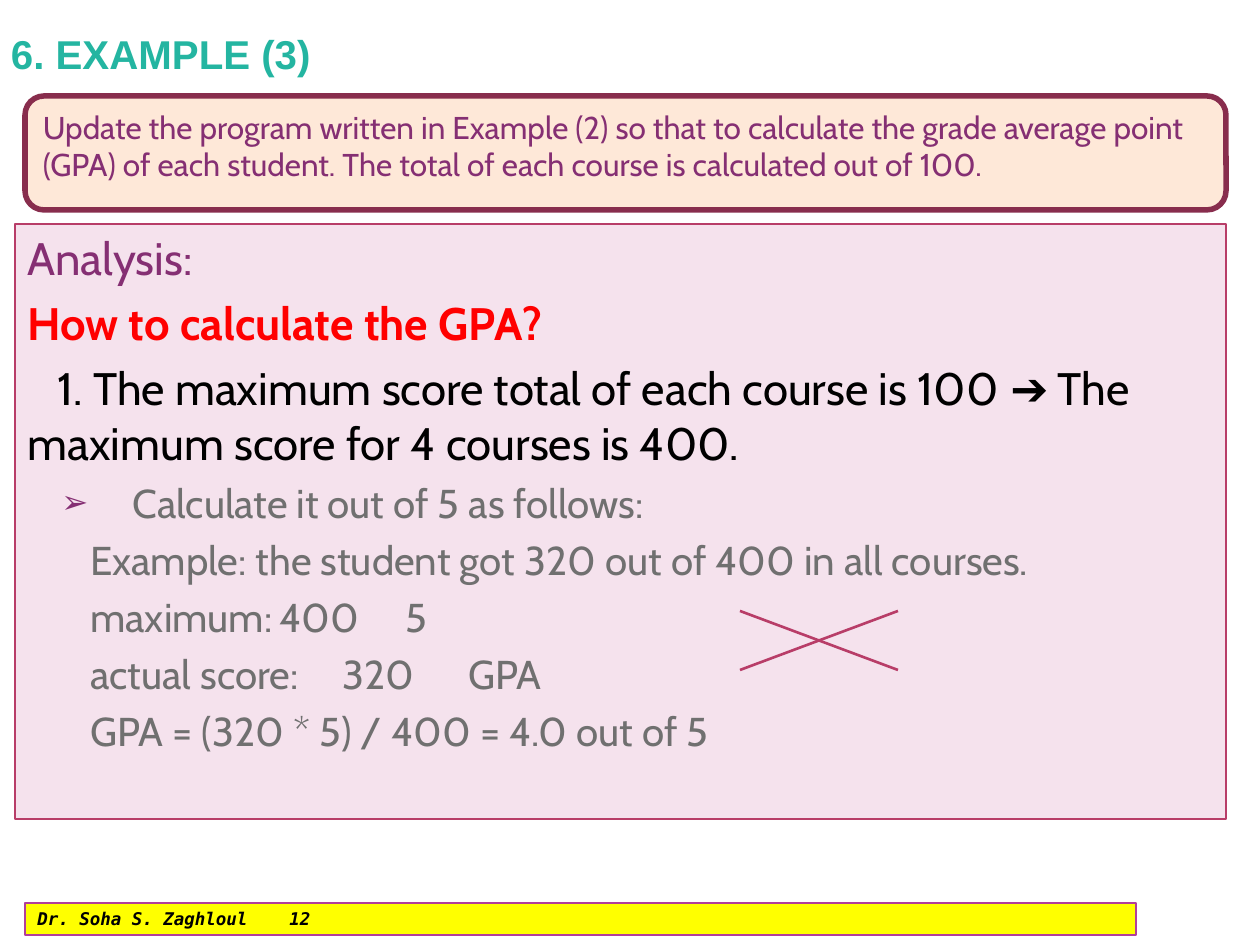
"""Build the GPA analysis slide with its worked cross-multiplication example."""
from lxml import etree
from pptx import Presentation
from pptx import util as u
from pptx.dml.color import RGBColor
from pptx.enum import shapes, text
from pptx.oxml.ns import qn

SCALE = 914400 / 126
COLORS = {
    "title": "24B5A1", "plum": "852F73", "red": "FF0000", "black": "000000",
    "gray": "707070", "panel": "F5E2ED", "rose": "B83D68", "peach": "FEE8D8",
    "wine": "882D4D", "yellow": "FFFF00", "violet": "B13F9A",
}
TITLE = "6. EXAMPLE (3)"
TASK = ("Update the program written in Example (2) so that to calculate the grade "
        "average point (GPA) of each student. The total of each course is calculated "
        "out of 100.")
FOOTER = "Dr. Soha S. Zaghloul\t12"
FOOTER_STOPS = [504]
HEADINGS = [
    ("Analysis:", "plum", False, 0),
    ("How to calculate the GPA?", "red", True, 0),
    ("1. The maximum score total of each course is 100 ➔ The maximum score "
     "for 4 courses is 400.", "black", False, 30),
]
BULLET = "Calculate it out of 5 as follows:"
STEPS = [
    ("\tExample: the student got 320 out of 400 in all courses.", [160]),
    ("\tmaximum:\t400\t5", [160, 538, 790]),
    ("\tactual score:\t320\tGPA", [286, 664, 916]),
    ("\tGPA = (320 * 5) / 400 = 4.0 out of 5", [34]),
]
CROSS = [(740, 611, 898, 670), (740, 670, 898, 611)]


def px(length):
    return u.Emu(round(length * SCALE))


def rgb(name):
    return RGBColor.from_string(COLORS[name])


def style(para, size, color, face="Cabin", bold=False, italic=False):
    for span in para.runs:
        font = span.font
        font.size, font.name = u.Pt(size), face
        font.bold, font.italic = bold, italic
        font.color.rgb = rgb(color)


def add_panel(page, kind, place, fill, line, width):
    box = page.shapes.add_shape(kind, *map(px, place))
    box.shadow.inherit = False
    box.fill.solid()
    box.fill.fore_color.rgb = rgb(fill)
    box.line.color.rgb = rgb(line)
    box.line.width = u.Pt(width)
    box.text_frame.word_wrap = True
    box.text_frame.vertical_anchor = text.MSO_ANCHOR.TOP
    return box


def add_para(frame, words, first=False, before=0, margin=0, indent=0, stops=()):
    para = frame.paragraphs[0] if first else frame.add_paragraph()
    para.text = words
    para.alignment = text.PP_ALIGN.LEFT
    para.space_before = u.Pt(before)
    props = para._p.get_or_add_pPr()
    props.set("marL", str(px(margin)))
    props.set("indent", str(px(indent)))
    if stops:
        tabs = etree.SubElement(props, qn("a:tabLst"))
        for stop in stops:
            etree.SubElement(tabs, qn("a:tab"), pos=str(px(stop)), algn="l")
    return para


def add_bullet(para, char, color, percent):
    props = para._p.get_or_add_pPr()
    tint = etree.SubElement(props, qn("a:buClr"))
    etree.SubElement(tint, qn("a:srgbClr"), val=COLORS[color])
    etree.SubElement(props, qn("a:buSzPct"), val=str(percent * 1000))
    etree.SubElement(props, qn("a:buFont"), typeface="Cabin")
    etree.SubElement(props, qn("a:buChar"), char=char)


def add_analysis(page):
    box = add_panel(page, shapes.MSO_SHAPE.RECTANGLE, (15, 224, 1211, 595),
                    "panel", "rose", 0.75)
    frame = box.text_frame
    for row, (words, color, bold, indent) in enumerate(HEADINGS):
        para = add_para(frame, words, row == 0, 6 if row else 0, indent=indent)
        style(para, 26, color, bold=bold)
    para = add_para(frame, BULLET, before=5, margin=105, indent=-71)
    add_bullet(para, "➢", "plum", 80)
    style(para, 23, "gray")
    for words, stops in STEPS:
        style(add_para(frame, words, before=5, stops=stops), 23, "gray")


def add_title(page):
    frame = page.shapes.add_textbox(*map(px, (5, 16, 1121, 62))).text_frame
    frame.word_wrap = True
    frame.vertical_anchor = text.MSO_ANCHOR.BOTTOM
    frame.margin_left = frame.margin_right = px(6)
    frame.margin_top = frame.margin_bottom = 0
    style(add_para(frame, TITLE, True), 23, "title", "Arial", bold=True)


def add_cross(page):
    for ends in CROSS:
        line = page.shapes.add_connector(shapes.MSO_CONNECTOR.STRAIGHT, *map(px, ends))
        line.line.color.rgb = rgb("rose")
        line.line.width = u.Pt(1.5)
        etree.SubElement(line._element.spPr, qn("a:effectLst"))


def main():
    deck = Presentation()
    deck.slide_width, deck.slide_height = px(1260), px(945)
    page = deck.slides.add_slide(deck.slide_layouts[6])
    add_analysis(page)
    add_title(page)
    footer = add_panel(page, shapes.MSO_SHAPE.RECTANGLE, (25, 903, 1111, 32),
                       "yellow", "violet", 0.75)
    footer.text_frame.vertical_anchor = text.MSO_ANCHOR.BOTTOM
    style(add_para(footer.text_frame, FOOTER, True, stops=FOOTER_STOPS), 10, "black",
          "DejaVu Sans Mono", bold=True, italic=True)
    task = add_panel(page, shapes.MSO_SHAPE.ROUNDED_RECTANGLE, (25, 96, 1201, 114),
                     "peach", "wine", 3.15)
    style(add_para(task.text_frame, TASK, True), 18, "plum")
    add_cross(page)
    deck.save("out.pptx")


if __name__ == "__main__":
    main()
